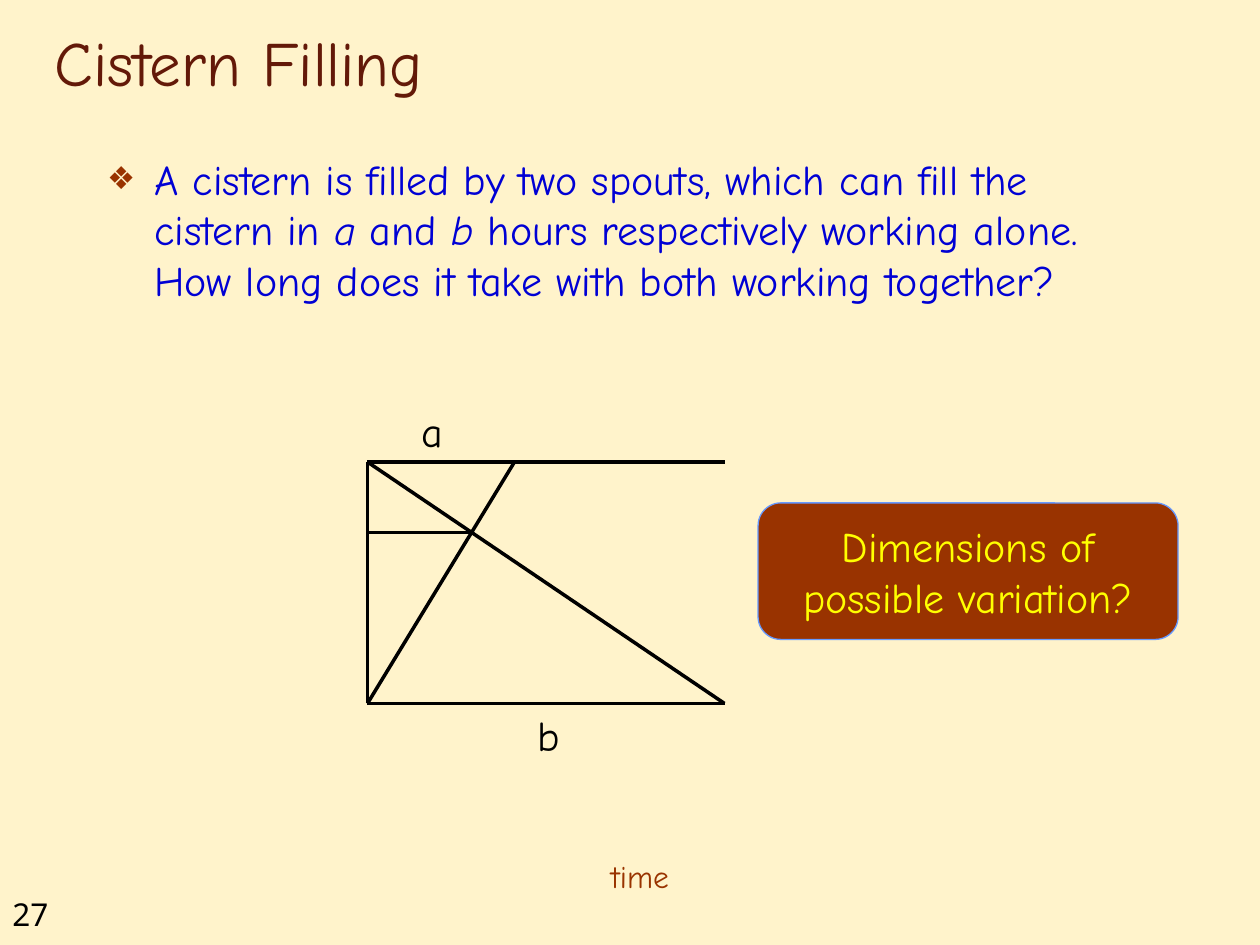
from dataclasses import dataclass

from lxml.etree import SubElement
from pptx import Presentation
from pptx.dml.color import RGBColor
from pptx.enum.shapes import MSO_CONNECTOR, MSO_SHAPE
from pptx.enum.text import MSO_ANCHOR, MSO_AUTO_SIZE, PP_ALIGN
from pptx.oxml.ns import qn
from pptx.util import Emu, Inches, Pt

# The slide is a grid of 120 columns by 90 rows.
CELL = Inches(1) / 12
COLS, ROWS = 120, 90

CREAM = RGBColor(0xFF, 0xF3, 0xCB)
MAROON = RGBColor(0x63, 0x19, 0x08)
BLUE = RGBColor(0x00, 0x00, 0xD4)
RUST = RGBColor(0x99, 0x33, 0x00)
SKY = RGBColor(0x66, 0x99, 0xFF)
YELLOW = RGBColor(0xFF, 0xFF, 0x00)
BLACK = RGBColor(0x00, 0x00, 0x00)

COMIC, SANS = "Comic Neue", "Noto Sans"


@dataclass(frozen=True)
class Box:
    col: float
    row: float
    cols: float
    rows: float


@dataclass(frozen=True)
class Point:
    col: float
    row: float


@dataclass(frozen=True)
class Label:
    text: str
    box: Box
    size: int = 24
    color: RGBColor = BLACK
    font: str = COMIC
    wrap: bool = True


LABELS = [
    Label("27", Box(0, 84.7, 9, 4.8), 18, font=SANS),
    Label("time", Box(57, 81, 9, 4.8), 18, RUST),
    Label("a", Box(39, 38, 4.5, 6), wrap=False),
    Label("b", Box(50, 67, 4.7, 6), wrap=False),
]

# Each run of the question, and whether it is italic.
QUESTION = [
    ("A cistern is filled by two spouts, which can fill the cistern in ", False),
    ("a", True),
    (" and ", False),
    ("b", True),
    (" hours respectively working alone. "
     "How long does it take with both working together?", False),
]


def grid(n: float) -> Emu:
    return Emu(round(n * CELL))


def bounds(box: Box) -> tuple[Emu, Emu, Emu, Emu]:
    return grid(box.col), grid(box.row), grid(box.cols), grid(box.rows)


def place(s, box: Box) -> None:
    s.left, s.top, s.width, s.height = bounds(box)


def style(p, size: int, color: RGBColor, font: str = COMIC) -> None:
    """Format every run of a paragraph."""
    for r in p.runs:
        r.font.size, r.font.name = Pt(size), font
        r.font.color.rgb = color


def add_label(slide, label: Label) -> None:
    tf = slide.shapes.add_textbox(*bounds(label.box)).text_frame
    tf.word_wrap = label.wrap
    tf.text = label.text
    style(tf.paragraphs[0], label.size, label.color, label.font)


def add_line(slide, start: Point, end: Point) -> None:
    s = slide.shapes.add_connector(
        MSO_CONNECTOR.STRAIGHT,
        grid(start.col), grid(start.row), grid(end.col), grid(end.row))
    s.line.color.rgb, s.line.width = BLACK, Pt(2)
    SubElement(s._element.spPr, qn("a:effectLst"))


def add_diagram(slide) -> None:
    """Draw lengths a and b on parallels; the diagonals cross at the answer."""
    left, top, bottom = 35, 44, 67
    a, b = 14, 34
    share = a / (a + b)
    top_left, bottom_left = Point(left, top), Point(left, bottom)
    top_end, bottom_end = Point(left + b, top), Point(left + b, bottom)
    a_end = Point(left + a, top)
    crossing = Point(left + b * share, top + (bottom - top) * share)
    for start, end in [
        (bottom_left, bottom_end),
        (top_left, top_end),
        (bottom_left, top_left),
        (bottom_left, a_end),
        (bottom_end, top_left),
        (crossing, Point(left, crossing.row)),
    ]:
        add_line(slide, start, end)


def set_bullet(p, char: str, color: RGBColor, percent: int, indent: Emu) -> None:
    pPr = p._p.get_or_add_pPr()
    pPr.set("marL", str(indent))
    pPr.set("indent", str(-indent))
    SubElement(SubElement(pPr, qn("a:buClr")), qn("a:srgbClr"), val=str(color))
    SubElement(pPr, qn("a:buSzPct"), val=str(percent * 1000))
    SubElement(pPr, qn("a:buChar"), char=char)


def fill_title(s) -> None:
    place(s, Box(4, 2, 102, 8))
    tf = s.text_frame
    tf.text = "Cistern Filling"
    tf.vertical_anchor = MSO_ANCHOR.BOTTOM
    tf.auto_size = MSO_AUTO_SIZE.NONE
    p = tf.paragraphs[0]
    p.alignment = PP_ALIGN.LEFT
    style(p, 36, MAROON)


def fill_body(s) -> None:
    place(s, Box(9, 14, 101.4, 26))
    tf = s.text_frame
    tf.auto_size = MSO_AUTO_SIZE.NONE
    p = tf.paragraphs[0]
    p.space_before = Pt(5)
    for text, italic in QUESTION:
        r = p.add_run()
        r.text, r.font.italic = text, italic
    style(p, 24, BLUE)
    set_bullet(p, "❖", RUST, 75, grid(4.5))


def add_callout(slide) -> None:
    s = slide.shapes.add_shape(
        MSO_SHAPE.ROUNDED_RECTANGLE, *bounds(Box(72.2, 47.9, 40, 13)))
    s.shadow.inherit = False
    s.fill.solid()
    s.fill.fore_color.rgb = RUST
    s.line.color.rgb, s.line.width = SKY, Pt(0.75)
    tf = s.text_frame
    tf.word_wrap = True
    tf.text = "Dimensions of possible variation?"
    p = tf.paragraphs[0]
    p.alignment = PP_ALIGN.CENTER
    style(p, 24, YELLOW)


def main() -> None:
    prs = Presentation()
    prs.slide_width, prs.slide_height = grid(COLS), grid(ROWS)
    slide = prs.slides.add_slide(prs.slide_layouts[1])
    slide.background.fill.solid()
    slide.background.fill.fore_color.rgb = CREAM
    fill_title(slide.shapes.title)
    fill_body(slide.placeholders[1])
    add_diagram(slide)
    for label in LABELS:
        add_label(slide, label)
    add_callout(slide)
    prs.save("out.pptx")


if __name__ == "__main__":
    main()
